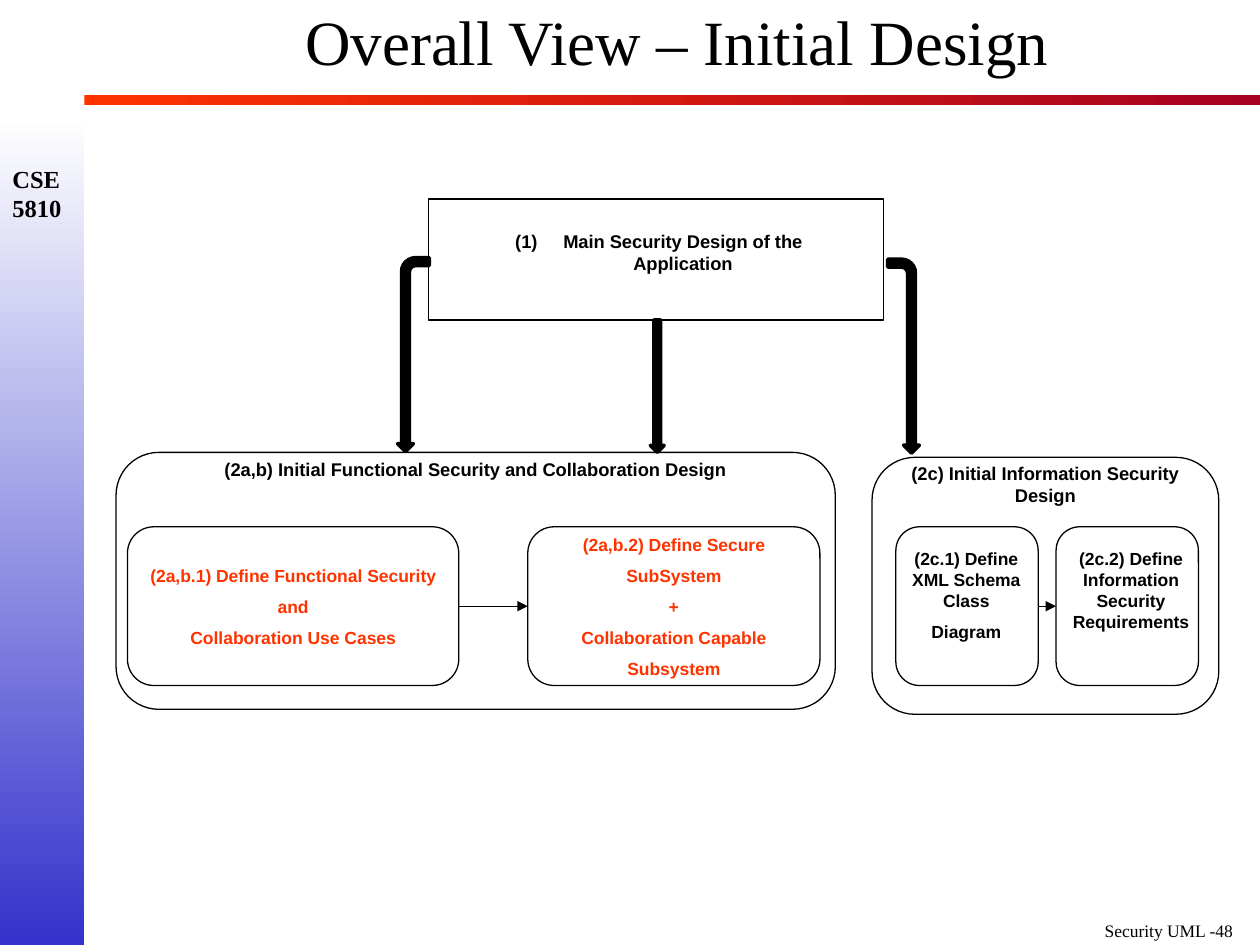
from lxml import etree
from pptx import Presentation, util as u
from pptx.dml.color import RGBColor
from pptx.enum import shapes, text
from pptx.oxml.ns import qn

color = RGBColor.from_string
RECT, ROUND = shapes.MSO_SHAPE.RECTANGLE, shapes.MSO_SHAPE.ROUNDED_RECTANGLE
LEFT, CENTER = text.PP_ALIGN.LEFT, text.PP_ALIGN.CENTER

deck = Presentation()
deck.slide_width, deck.slide_height = u.Cm(25.4), u.Cm(19.05)
slide = deck.slides.add_slide(deck.slide_layouts[6])


def draw(kind, place, fill="FFFFFF", line_width=0.75):
    shape = slide.shapes.add_shape(kind, *map(u.Cm, place))
    shape.shadow.inherit = False
    shape.fill.solid()
    shape.fill.fore_color.rgb = color(fill)
    shape.line.color.rgb = color("000000")
    shape.line.width = u.Pt(line_width)
    return shape


def write(shape, lines, size, font="Arial", ink="000000", bold=True,
          align=CENTER, gap=5.7):
    frame = shape.text_frame
    frame.word_wrap = True
    frame.text = "\n".join(lines)
    for number, paragraph in enumerate(frame.paragraphs):
        paragraph.alignment = align
        if number:
            paragraph.space_before = u.Pt(gap)
        for run in paragraph.runs:
            run.font.size = u.Pt(size)
            run.font.name = font
            run.font.bold = bold
            run.font.color.rgb = color(ink)
    return frame


# Side band and title rule
for place, start, end, angle in [
    ((0, 2.34, 1.7, 16.71), "FFFFFF", "3333CC", 270),
    ((1.7, 1.91, 23.7, 0.2), "FF3300", "A50021", 0),
]:
    band = draw(RECT, place)
    band.line.fill.background()
    band.fill.gradient()
    band.fill.gradient_angle = angle
    for stop, shade in zip(band.fill.gradient_stops, (start, end)):
        stop.color.rgb = color(shade)

# Title, course code and footer
for place, lines, size, bold, align in [
    ((22.02, 18.42, 3.38, 0.66), ["Security UML -48"], 10, False, LEFT),
    ((0, 3.18, 1.7, 1.45), ["CSE", "5810"], 14, True, LEFT),
    ((1.8, 0, 23.7, 1.9), ["Overall View – Initial Design"], 36, False, CENTER),
]:
    label = slide.shapes.add_textbox(*map(u.Cm, place))
    heading = write(label, lines, size, "Times New Roman", bold=bold,
                    align=align, gap=0)
# The title is the last of the three
heading.vertical_anchor = text.MSO_ANCHOR.MIDDLE
heading.paragraphs[0].line_spacing = 0.8

# Main design, the two initial designs and the information steps
for kind, place, text_place, lines, size in [
    (RECT, (8.64, 4.01, 9.17, 2.44), (9.35, 4.52, 7.87, 1.52),
     ["Main Security Design of the Application"], 10.5),
    (ROUND, (2.34, 9.12, 14.5, 5.18), (2.34, 9.12, 14.5, 0.94),
     ["(2a,b) Initial Functional Security and Collaboration Design"], 10.5),
    (ROUND, (17.58, 9.22, 6.99, 5.18), (17.58, 9.19, 6.99, 1.52),
     ["(2c) Initial Information Security Design"], 10.5),
    (ROUND, (18.06, 10.62, 2.87, 3.2), (18.06, 10.92, 2.84, 2.9),
     ["(2c.1) Define XML Schema Class", "Diagram"], 10),
    (ROUND, (21.29, 10.62, 2.87, 3.2), (21.29, 10.92, 3.02, 2.59),
     ["(2c.2) Define Information Security Requirements"], 10),
]:
    draw(kind, place)
    caption = write(slide.shapes.add_textbox(*map(u.Cm, text_place)), lines, size)
    if kind == RECT:
        numbering = caption.paragraphs[0]._p.get_or_add_pPr()
        numbering.set("marL", str(u.Cm(0.97)))
        numbering.set("indent", str(u.Cm(-0.97)))
        etree.SubElement(numbering, qn("a:buAutoNum"), type="arabicParenBoth")

# Functional security steps
for left, width, lines in [
    (2.57, 6.68, ["(2a,b.1) Define Functional Security", "and",
                  "Collaboration Use Cases"]),
    (10.64, 5.89, ["(2a,b.2) Define Secure", "SubSystem", "+",
                   "Collaboration Capable", "Subsystem"]),
]:
    step = write(draw(ROUND, (left, 10.62, width, 3.2)), lines, 10, ink="FF3300")
    step.word_wrap = False
    step.vertical_anchor = text.MSO_ANCHOR.MIDDLE

# Thin arrows between steps
for start, end in [(9.26, 10.64), (20.93, 21.29)]:
    link = slide.shapes.add_connector(
        shapes.MSO_CONNECTOR.STRAIGHT,
        u.Cm(start), u.Cm(12.22), u.Cm(end), u.Cm(12.22))
    link.line.color.rgb = color("000000")
    link.line.width = u.Pt(0.75)
    etree.SubElement(link.line._get_or_add_ln(), qn("a:tailEnd"), type="triangle")
    etree.SubElement(link._element.spPr, qn("a:effectLst"))

# Thick arrows from the main design
draw(shapes.MSO_SHAPE.DOWN_ARROW, (13.11, 6.45, 0.28, 2.67), "000000", 2)
for left, top, turn in [(16.26, 6.86, 90), (6.38, 6.83, 270)]:
    bend = draw(shapes.MSO_SHAPE.BENT_ARROW, (left, top, 3.91, 0.64), "000000", 2)
    bend.rotation = turn
    if turn == 270:
        bend._element.spPr.find(qn("a:xfrm")).set("flipH", "1")

deck.save("out.pptx")
